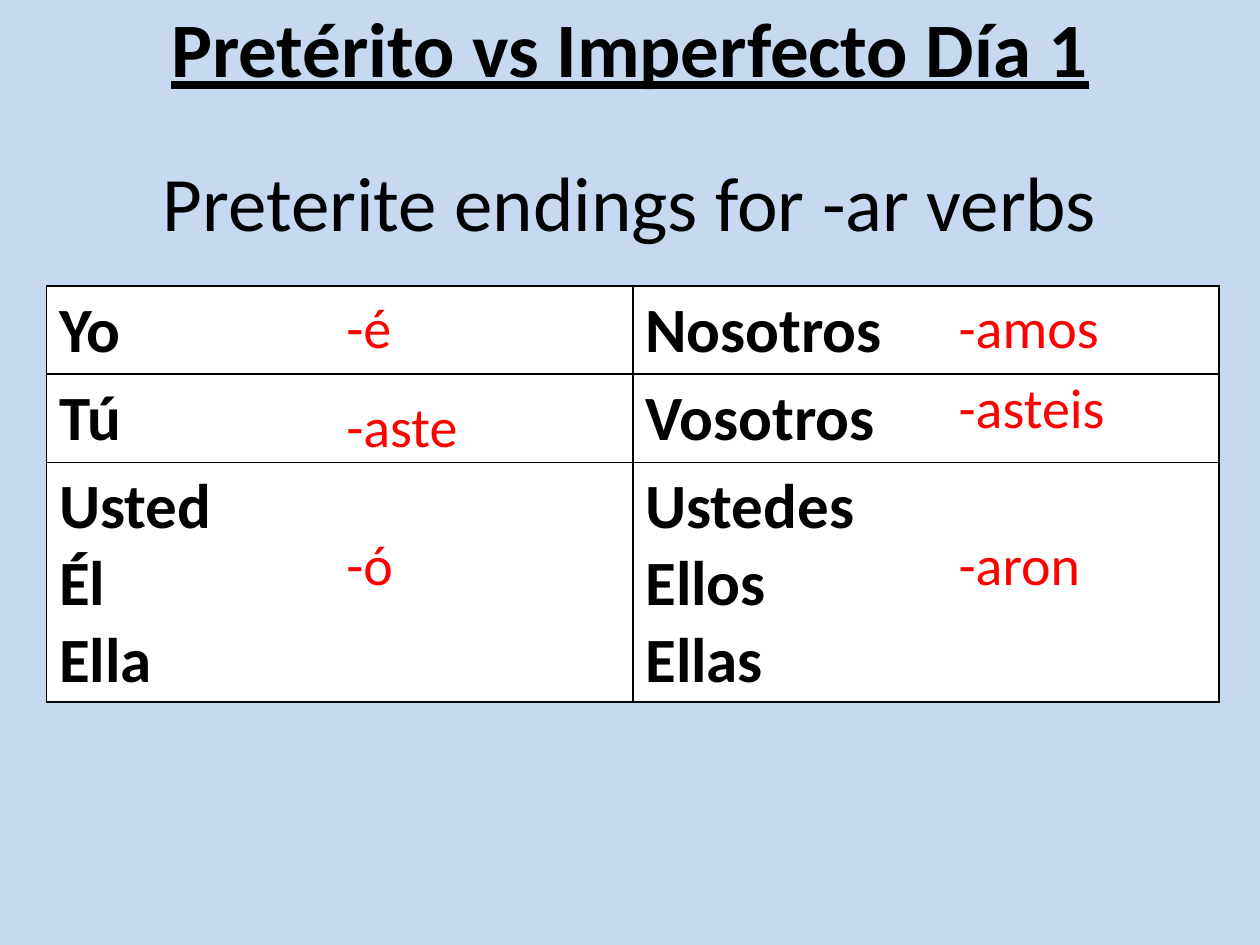
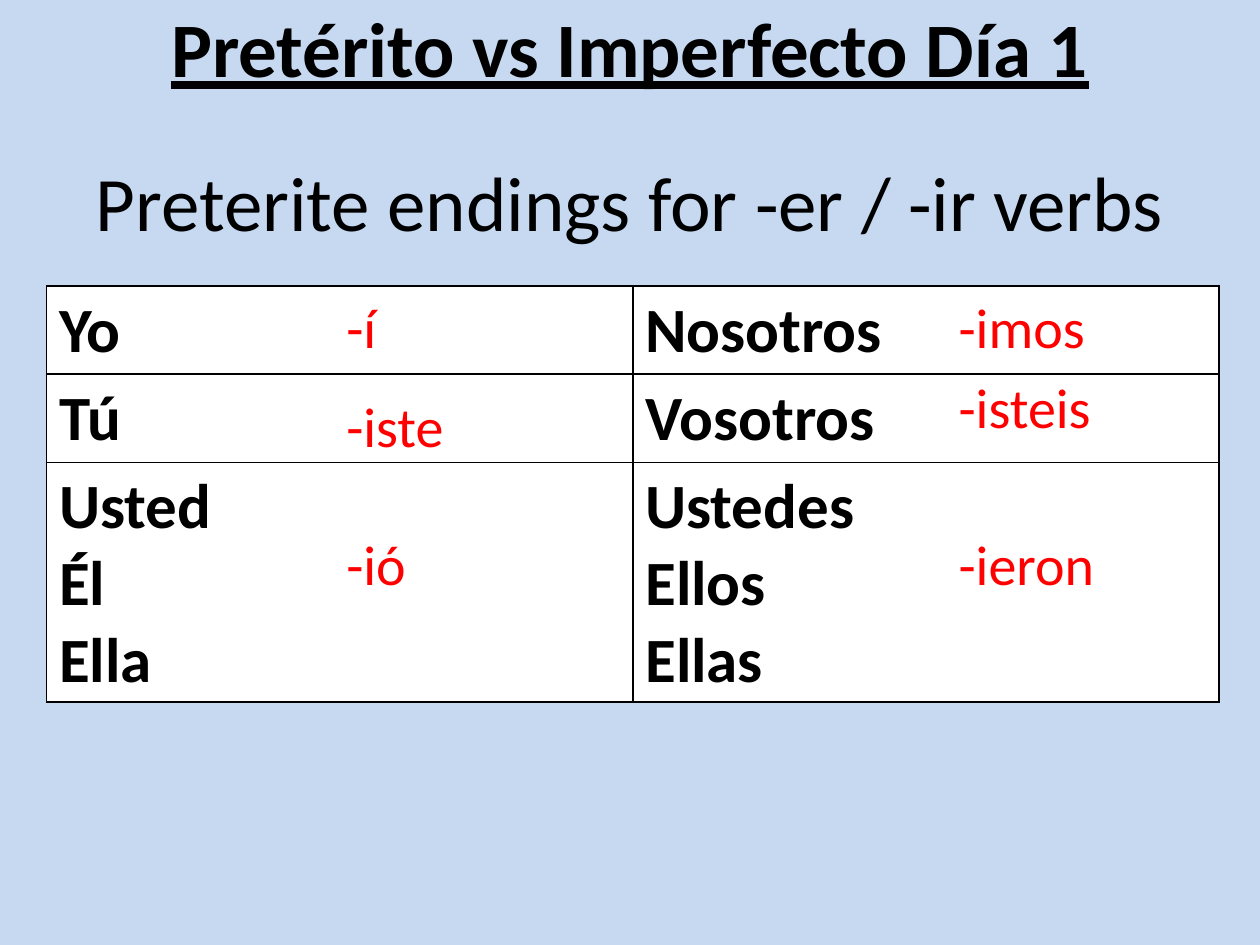
from dataclasses import dataclass

from lxml import etree
from pptx import Presentation
from pptx.dml.color import RGBColor
from pptx.enum.text import MSO_ANCHOR, PP_ALIGN
from pptx.oxml.ns import qn
from pptx.util import Pt

LEFT, CENTER = PP_ALIGN.LEFT, PP_ALIGN.CENTER
TOP, MIDDLE = MSO_ANCHOR.TOP, MSO_ANCHOR.MIDDLE


@dataclass(frozen=True)
class Theme:
    """Colours, font and type sizes shared by the slides."""
    font: str = "Calibri"
    sky: str = "C6D9F1"
    ink: str = "000000"
    paper: str = "FFFFFF"
    red: str = "FF0000"
    head: int = 44
    noun: int = 36
    tail: int = 32
    rule: int = 1


THEME = Theme()
WIDE, HIGH = 720, 540
TITLE = "Pretérito vs Imperfecto Día 1"
TITLE_BOX = (0, -22.3, WIDE, 97.9)
LEAD_BOX = (0, 65.5, WIDE, 97.9)
GRID_BOX = (26.6, 163.4, 670, 237.6)
ROWS = (50.4, 50.4, 136.8)
NOUNS = (
    ("Yo", "Nosotros"),
    ("Tú", "Vosotros"),
    ("Usted\nÉl\nElla", "Ustedes\nEllos\nEllas"),
)
TAIL_HIGH = 46
TAIL_COLS = (
    (164.2, 88.6, (0, 56.9, 135.4)),
    (514.1, 156.2, (0, 46.1, 135.4)),
)
DECK = (
    ("Preterite endings for -ar verbs",
     (("-é", "-aste", "-ó"), ("-amos", "-asteis", "-aron"))),
    ("Preterite endings for -er / -ir verbs",
     (("-í", "-iste", "-ió"), ("-imos", "-isteis", "-ieron"))),
)


def write(frame, text, size, color=THEME.ink, bold=False, line=False,
          align=LEFT, anchor=TOP):
    """Fill a text frame, one paragraph for each line of text."""
    frame.word_wrap = True
    frame.vertical_anchor = anchor
    frame.text = text
    for para in frame.paragraphs:
        para.alignment = align
        for run in para.runs:
            font = run.font
            font.name, font.size = THEME.font, Pt(size)
            font.bold, font.underline = bold, line
            font.color.rgb = RGBColor.from_string(color)


def label(slide, box, text, size, **style):
    """Add a text box and write its text."""
    shape = slide.shapes.add_textbox(*map(Pt, box))
    write(shape.text_frame, text, size, **style)


def border(cell):
    """Rule all four sides of a table cell."""
    props = cell._tc.get_or_add_tcPr()
    for side in ("lnL", "lnR", "lnT", "lnB"):
        edge = etree.SubElement(props, qn(f"a:{side}"), w=str(Pt(THEME.rule)))
        fill = etree.SubElement(edge, qn("a:solidFill"))
        etree.SubElement(fill, qn("a:srgbClr"), val=THEME.ink)


def heading(slide, box, text, **style):
    """Place a large centred line in its box."""
    label(slide, box, text, THEME.head, align=CENTER, anchor=MIDDLE, **style)


def pronouns(slide, box):
    """Draw the table of pronouns."""
    frame = slide.shapes.add_table(len(ROWS), len(NOUNS[0]), *map(Pt, box))
    table = frame.table
    table.first_row = table.horz_banding = False
    for row, high, nouns in zip(table.rows, ROWS, NOUNS):
        row.height = Pt(high)
        for cell, noun in zip(row.cells, nouns):
            border(cell)
            cell.fill.solid()
            cell.fill.fore_color.rgb = RGBColor.from_string(THEME.paper)
            write(cell.text_frame, noun, THEME.noun, bold=True)


def endings(slide, box, tails):
    """Lay the verb endings over the table in two columns."""
    left, top = box[:2]
    for (shift, wide, drops), words in zip(TAIL_COLS, tails):
        for drop, word in zip(drops, words):
            place = (left + shift, top + drop, wide, TAIL_HIGH)
            label(slide, place, word, THEME.tail, color=THEME.red)


def lesson(deck, lead, tails):
    """Add one slide of verb endings."""
    slide = deck.slides.add_slide(deck.slide_layouts[6])
    fill = slide.background.fill
    fill.solid()
    fill.fore_color.rgb = RGBColor.from_string(THEME.sky)
    heading(slide, TITLE_BOX, TITLE, bold=True, line=True)
    pronouns(slide, GRID_BOX)
    heading(slide, LEAD_BOX, lead)
    endings(slide, GRID_BOX, tails)


def main():
    """Build and save the deck."""
    deck = Presentation()
    deck.slide_width, deck.slide_height = Pt(WIDE), Pt(HIGH)
    for lead, tails in DECK:
        lesson(deck, lead, tails)
    deck.save("out.pptx")


if __name__ == "__main__":
    main()
